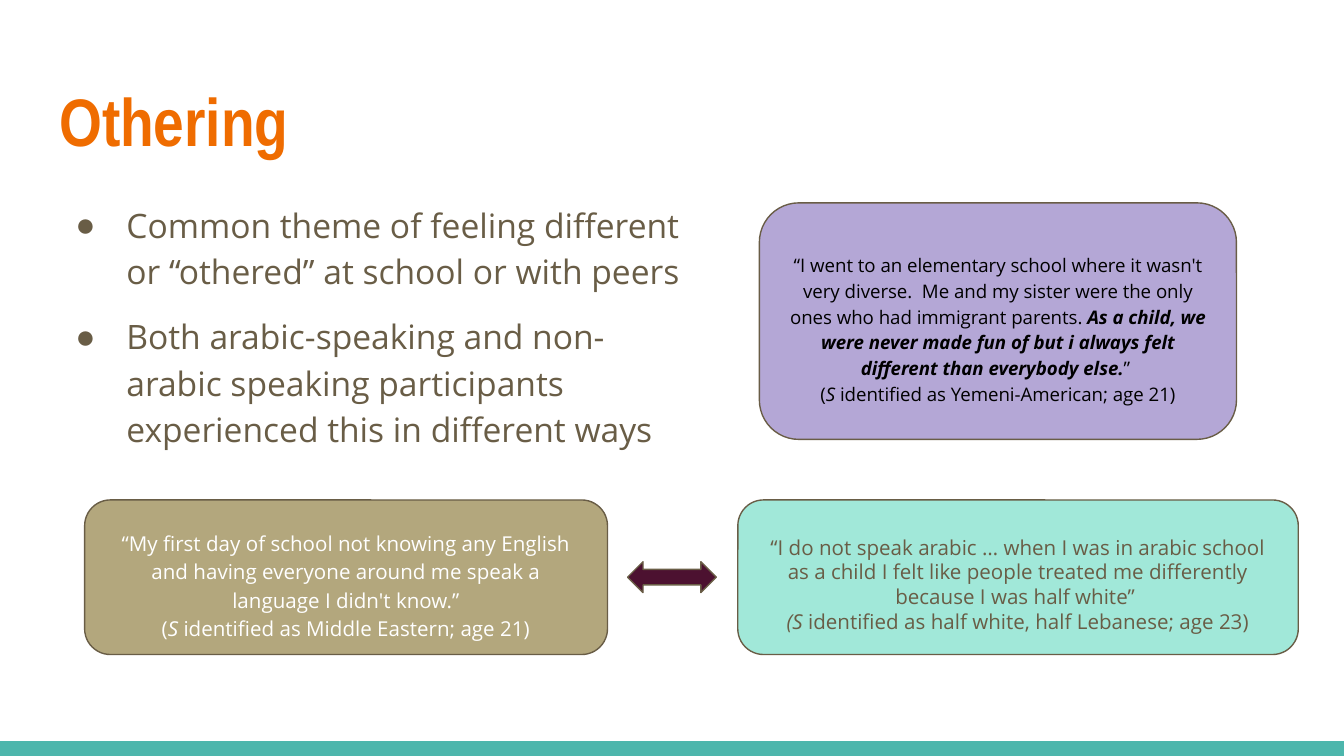
from lxml.etree import SubElement
from pptx import Presentation
from pptx.dml.color import RGBColor
from pptx.enum.shapes import MSO_SHAPE as Shape
from pptx.enum.text import MSO_ANCHOR as Anchor, MSO_AUTO_SIZE as AutoSize, PP_ALIGN as Align
from pptx.oxml.ns import qn
from pptx.util import Inches, Pt

SLIDE_W = 10
SLIDE_H = SLIDE_W * 9 / 16
MARGIN = 0.34
BAND_H = 0.11
QUOTE_ROW, QUOTE_H = 3.72, 1.15  # the two facing quotes share a row
BODY_FONT, TITLE_FONT, BULLET_FONT = "Open Sans", "Arial Narrow", "Arial"
COLORS = {
    "title": "EF6C00", "text": "695D46", "band": "4DB6AC", "arrow": "4C1130",
    "lilac": "B4A7D6", "mint": "A1E8D9", "sand": "B3A77D",
    "black": "000000", "white": "FFFFFF",
}
PLAIN, ITALIC, STRONG = (False, False), (False, True), (True, True)

THEMES = [
    "Common theme of feeling different or “othered” at school or with peers",
    "Both arabic-speaking and non-arabic speaking participants experienced this in different ways",
]
# box, fill, text colour, size, line spacing, paragraphs of (words, style)
QUOTES = [
    ((5.65, 1.51, 3.55, 1.76), "lilac", "black", 10, 1.15, [
        [("“I went to an elementary school where it wasn't very diverse.  Me and my sister "
          "were the only ones who had immigrant parents. ", PLAIN),
         ("As a child, we were never made fun of but i always felt different than "
          "everybody else.", STRONG),
         ("” ", PLAIN)],
        [("(", PLAIN), ("S ", ITALIC), ("identified as Yemeni-American; age 21)", PLAIN)],
    ]),
    ((5.49, QUOTE_ROW, 4.17, QUOTE_H), "mint", "text", 11, 1.0, [
        [("“I do not speak arabic … when I was in arabic school as a child I felt like "
          "people treated me differently because I was half white” ", PLAIN)],
        [("(S ", ITALIC), ("identified as half white, half Lebanese; age 23)", PLAIN)],
    ]),
    ((0.63, QUOTE_ROW, 3.89, QUOTE_H), "sand", "white", 11, 1.15, [
        [("“My first day of school not knowing any English and having everyone around me "
          "speak a language I didn't know.”", PLAIN)],
        [("(", PLAIN), ("S ", ITALIC), ("identified as Middle Eastern; age 21)", PLAIN)],
    ]),
]


def rgb(name):
    return RGBColor.from_string(COLORS[name])


def add_run(paragraph, words, font, size, color, style=PLAIN):
    run = paragraph.add_run()
    run.text = words
    run.font.name, run.font.size = font, Pt(size)
    run.font.bold, run.font.italic = style
    run.font.color.rgb = rgb(color)


def set_frame(frame, anchor, bottom=0.1):
    frame.word_wrap = True
    frame.auto_size = AutoSize.NONE
    frame.vertical_anchor = anchor
    frame.margin_left = frame.margin_right = frame.margin_top = Inches(0.1)
    frame.margin_bottom = Inches(bottom)


def paragraph_at(frame, index):
    return frame.add_paragraph() if index else frame.paragraphs[0]


def move(placeholder, box):
    (placeholder.left, placeholder.top,
     placeholder.width, placeholder.height) = map(Inches, box)


def add_block(slide, kind, box, fill, outline=True):
    block = slide.shapes.add_shape(kind, *map(Inches, box))
    block.shadow.inherit = False
    block.fill.solid()
    block.fill.fore_color.rgb = rgb(fill)
    if outline:
        block.line.color.rgb = rgb("text")
        block.line.width = Pt(0.75)
    else:
        block.line.fill.background()
    return block


def fill_title(slide, box):
    title = slide.shapes.title
    move(title, box)
    set_frame(title.text_frame, Anchor.TOP)
    heading = title.text_frame.paragraphs[0]
    heading.alignment = Align.LEFT
    add_run(heading, "Othering", TITLE_FONT, 36, "title", (True, False))


def fill_themes(slide, box):
    body = slide.placeholders[1]
    move(body, box)
    set_frame(body.text_frame, Anchor.TOP)
    for index, theme in enumerate(THEMES):
        item = paragraph_at(body.text_frame, index)
        item.line_spacing = 1.15
        item.space_before = Pt(10 if index else 0)
        add_run(item, theme, BODY_FONT, 18, "text")
        # Hanging bullet
        props = item._p.get_or_add_pPr()
        props.set("marL", str(Inches(0.5)))
        props.set("indent", str(Inches(-0.38)))
        bullet_color = SubElement(props, qn("a:buClr"))
        SubElement(bullet_color, qn("a:srgbClr"), val=COLORS["text"])
        SubElement(props, qn("a:buFont"), typeface=BULLET_FONT)
        SubElement(props, qn("a:buChar"), char="●")


def add_quote(slide, box, fill, color, size, spacing, paragraphs):
    card = add_block(slide, Shape.ROUNDED_RECTANGLE, box, fill)
    set_frame(card.text_frame, Anchor.MIDDLE, bottom=0)
    for index, parts in enumerate(paragraphs):
        line = paragraph_at(card.text_frame, index)
        line.alignment = Align.CENTER
        line.line_spacing = spacing
        for words, style in parts:
            add_run(line, words, BODY_FONT, size, color, style)


def main():
    deck = Presentation()
    deck.slide_width, deck.slide_height = Inches(SLIDE_W), Inches(SLIDE_H)
    slide = deck.slides.add_slide(deck.slide_layouts[1])

    # Bottom band
    add_block(slide, Shape.RECTANGLE, (0, SLIDE_H - BAND_H, SLIDE_W, BAND_H), "band",
              outline=False)
    # Heading and themes
    fill_title(slide, (MARGIN, 0.49, SLIDE_W - 2 * MARGIN, 0.77))
    fill_themes(slide, (MARGIN, 1.38, 4.85, 3.61))
    # Participant quotes
    for quote in QUOTES:
        add_quote(slide, *quote)
    # Arrow between the facing quotes
    arrow_h = 0.23
    add_block(slide, Shape.LEFT_RIGHT_ARROW,
              (4.67, QUOTE_ROW + (QUOTE_H - arrow_h) / 2, 0.66, arrow_h), "arrow")

    deck.save("out.pptx")


if __name__ == "__main__":
    main()
